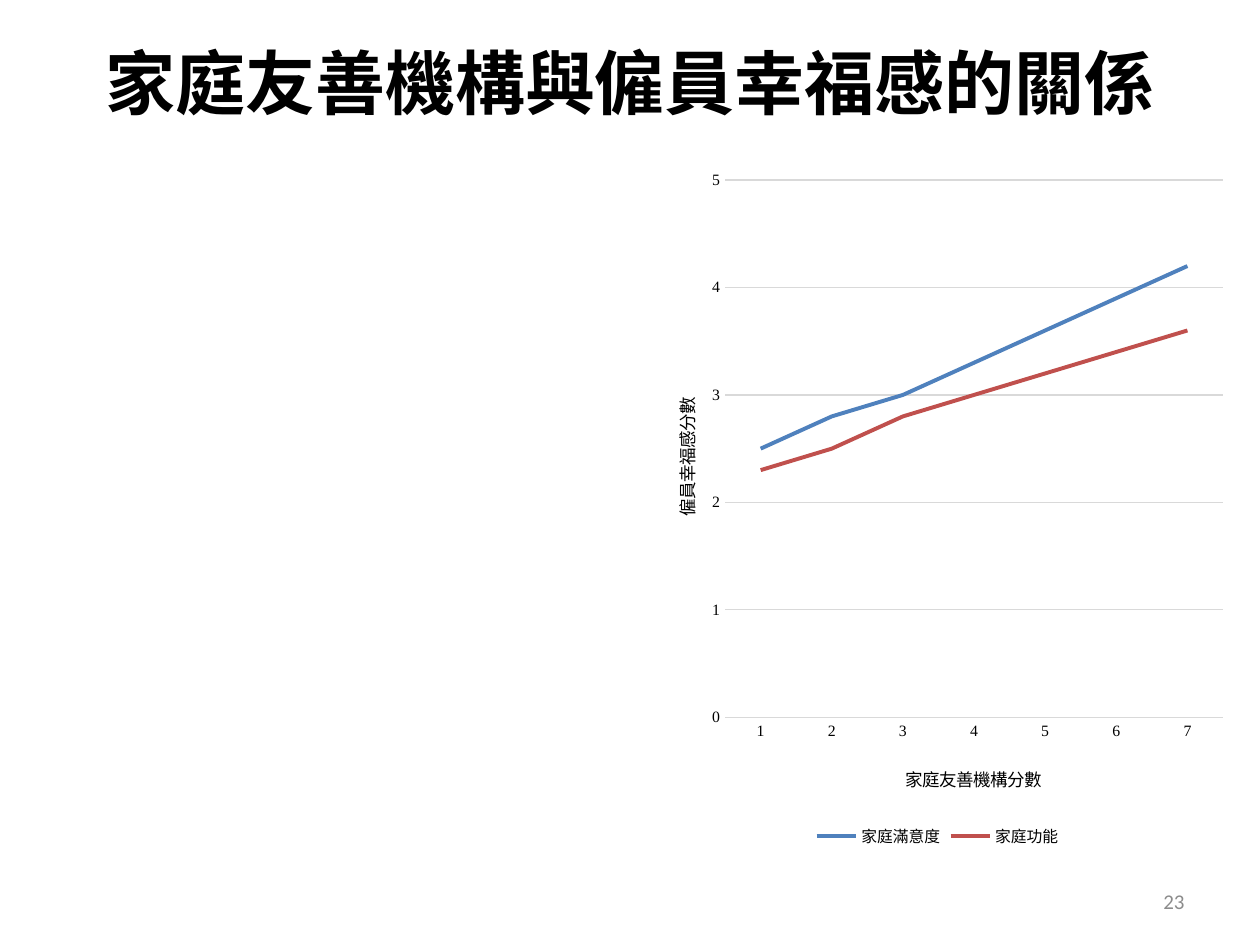
import pptx
import pptx.chart.data
import pptx.dml.color
import pptx.enum.chart
import pptx.enum.text
import pptx.oxml
import pptx.oxml.ns
import pptx.util

RGB = pptx.dml.color.RGBColor
BLACK = RGB(0x00, 0x00, 0x00)
WHITE = RGB(0xFF, 0xFF, 0xFF)
GRAY = RGB(0x8C, 0x8C, 0x8C)
GRID = RGB(0xD9, 0xD9, 0xD9)
BLUE = RGB(0x4F, 0x81, 0xBD)
RED = RGB(0xC0, 0x50, 0x4D)
SERIF = "Times New Roman"

TITLE = "家庭友善機構與僱員幸福感的關係"
NUMBER = "23"
X_TITLE = "家庭友善機構分數"
Y_TITLE = "僱員幸福感分數"
SCORES = ["1", "2", "3", "4", "5", "6", "7"]
SERIES = [
    ("家庭滿意度", [2.5, 2.8, 3, 3.3, 3.6, 3.9, 4.2], BLUE),
    ("家庭功能", [2.3, 2.5, 2.8, 3, 3.2, 3.4, 3.6], RED),
]

CHART_BOX = (640, 158, 595, 694)
PLOT_BOX = (725, 180, 498, 537)
X_TITLE_AT = (899, 763)
Y_TITLE_AT = (672, 395)


def px(n):
    return round(n * 914400 / 126)


def set_font(font, size, color=BLACK, name=SERIF, bold=False):
    font.size = pptx.util.Pt(size)
    font.name = name
    font.bold = bold
    font.color.rgb = color


def manual_layout(parent, left, top, width=None, height=None):
    x, y, w, h = CHART_BOX
    parts = {"x": (left - x) / w, "y": (top - y) / h}
    if width:
        parts.update(w=width / w, h=height / h)
    target = '<c:layoutTarget val="inner"/>' if width else ""
    modes = "".join(f'<c:{k}Mode val="edge"/>' for k in "xy")
    values = "".join(f'<c:{k} val="{v:.2f}"/>' if not width else f'<c:{k} val="{v:.3f}"/>'
                     for k, v in parts.items())
    layout = pptx.oxml.parse_xml(
        f'<c:layout {pptx.oxml.ns.nsdecls("c")}><c:manualLayout>'
        f'{target}{modes}{values}</c:manualLayout></c:layout>')
    for old in parent.findall(pptx.oxml.ns.qn("c:layout")):
        parent.remove(old)
    tx = parent.find(pptx.oxml.ns.qn("c:tx"))
    parent.insert(0 if tx is None else parent.index(tx) + 1, layout)


def style_axis(axis, title, at):
    axis.major_tick_mark = axis.minor_tick_mark = pptx.enum.chart.XL_TICK_MARK.NONE
    set_font(axis.tick_labels.font, 9)
    tf = axis.axis_title.text_frame
    tf.text = title
    set_font(tf.paragraphs[0].runs[0].font, 10)
    manual_layout(axis.axis_title._element, *at)


def style_line(line, color, width):
    line.color.rgb = color
    line.width = pptx.util.Pt(width)


prs = pptx.Presentation()
prs.slide_width, prs.slide_height = px(1260), px(945)
slide = prs.slides.add_slide(prs.slide_layouts[5])

sp = slide.shapes.title
sp.left, sp.top, sp.width, sp.height = px(63), px(3), px(1134), px(157)
tf = sp.text_frame
tf.text = TITLE
tf.vertical_anchor = pptx.enum.text.MSO_ANCHOR.MIDDLE
p = tf.paragraphs[0]
p.alignment = pptx.enum.text.PP_ALIGN.CENTER
set_font(p.runs[0].font, 40, bold=True)

sp = slide.shapes.add_textbox(px(903), px(876), px(294), px(50))
tf = sp.text_frame
tf.word_wrap = True
tf.text = NUMBER
tf.vertical_anchor = pptx.enum.text.MSO_ANCHOR.MIDDLE
p = tf.paragraphs[0]
p.alignment = pptx.enum.text.PP_ALIGN.RIGHT
set_font(p.runs[0].font, 12, GRAY, "Calibri")

data = pptx.chart.data.CategoryChartData()
data.categories = SCORES
for name, values, _ in SERIES:
    data.add_series(name, values)
chart = slide.shapes.add_chart(
    pptx.enum.chart.XL_CHART_TYPE.LINE, *map(px, CHART_BOX), data).chart
chart.has_title = False
set_font(chart.font, 10)
chart.has_legend = True
chart.legend.position = pptx.enum.chart.XL_LEGEND_POSITION.BOTTOM
chart.legend.include_in_layout = False
set_font(chart.legend.font, 9)

style_axis(chart.category_axis, X_TITLE, X_TITLE_AT)
style_line(chart.category_axis.format.line, GRID, 0.75)
axis = chart.value_axis
style_axis(axis, Y_TITLE, Y_TITLE_AT)
axis.minimum_scale, axis.maximum_scale, axis.major_unit = 0, 5, 1
axis.format.line.fill.background()
axis.has_major_gridlines = True
style_line(axis.major_gridlines.format.line, GRID, 0.75)

plot = chart.plots[0]
plot.vary_by_categories = False
for series, (_, _, color) in zip(plot.series, SERIES):
    series.smooth = False
    series.marker.style = pptx.enum.chart.XL_MARKER_STYLE.NONE
    style_line(series.format.line, color, 2.25)

area = chart._chartSpace.chart.plotArea
manual_layout(area, *PLOT_BOX)
fill = pptx.oxml.parse_xml(
    f'<c:spPr {pptx.oxml.ns.nsdecls("c", "a")}><a:solidFill><a:srgbClr val="{WHITE}"/>'
    '</a:solidFill><a:ln><a:noFill/></a:ln></c:spPr>')
chart._chartSpace.chart.addnext(fill)

prs.save("out.pptx")
